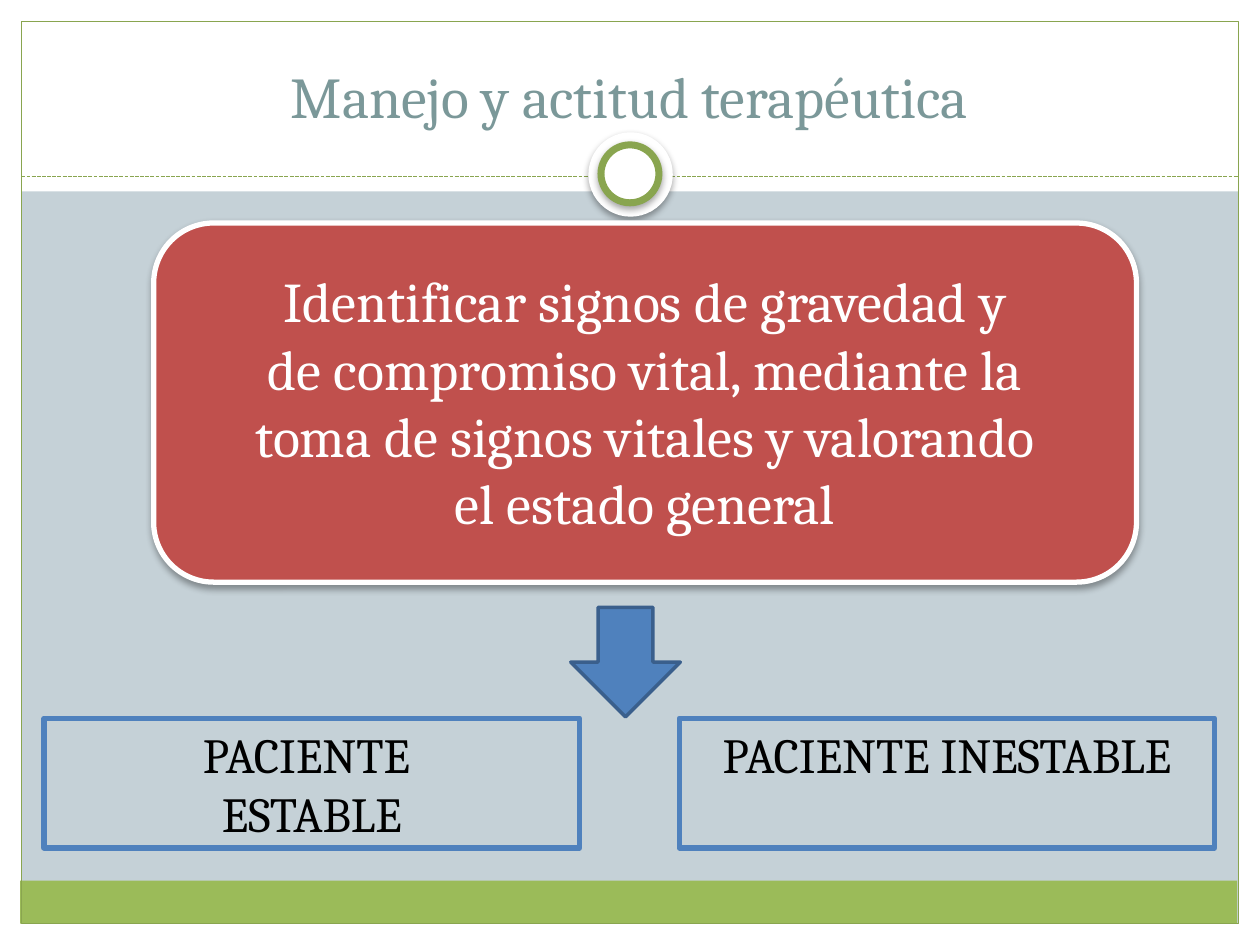
from dataclasses import dataclass
from typing import Optional

from lxml import etree
from pptx import Presentation
from pptx.dml.color import RGBColor
from pptx.enum import dml, shapes, text
from pptx.oxml import ns
from pptx.util import Inches, Pt

FONT = "Cambria"
COLORS = {
    "background": "C5D1D7", "white": "FFFFFF", "black": "000000",
    "green": "9BBB59", "dark_green": "89A54F", "title": "7B9899",
    "red": "C0504D", "blue": "4F81BD", "dark_blue": "3A5F8C",
}
KIND = shapes.MSO_SHAPE


@dataclass
class Block:
    left: float
    top: float
    width: float
    height: float
    kind: int = KIND.RECTANGLE
    fill: Optional[str] = None
    line: Optional[str] = None
    weight: float = 0.75
    shadow: bool = False


def rgb(name: str) -> RGBColor:
    return RGBColor.from_string(COLORS[name])


def add_shadow(shape) -> None:
    effects = shape._element.spPr.find(ns.qn("a:effectLst"))
    outer = etree.SubElement(effects, ns.qn("a:outerShdw"), blurRad=str(Pt(4)),
                             dist=str(Pt(2)), dir="5400000", rotWithShape="0")
    color = etree.SubElement(outer, ns.qn("a:srgbClr"), val=COLORS["black"])
    etree.SubElement(color, ns.qn("a:alpha"), val="35000")


def draw(slide, block: Block):
    shape = slide.shapes.add_shape(block.kind, Inches(block.left), Inches(block.top),
                                   Inches(block.width), Inches(block.height))
    shape.shadow.inherit = False
    if block.fill:
        shape.fill.solid()
        shape.fill.fore_color.rgb = rgb(block.fill)
    else:
        shape.fill.background()
    if block.line:
        shape.line.color.rgb = rgb(block.line)
        shape.line.width = Pt(block.weight)
    else:
        shape.line.fill.background()
    if block.shadow:
        add_shadow(shape)
    return shape


def write(shape, lines: list[str], size: float, color: str,
          anchor=text.MSO_ANCHOR.TOP) -> None:
    frame = shape.text_frame
    frame.word_wrap = True
    frame.auto_size = text.MSO_AUTO_SIZE.NONE
    frame.vertical_anchor = anchor
    for i, line in enumerate(lines):
        paragraph = frame.add_paragraph() if i else frame.paragraphs[0]
        paragraph.alignment = text.PP_ALIGN.CENTER
        run = paragraph.add_run()
        run.text = line
        run.font.name = FONT
        run.font.size = Pt(size)
        run.font.color.rgb = rgb(color)


def draw_frame(slide) -> None:
    margins = [
        Block(0, 7.33, 10, 0.17, fill="white"),
        Block(0, 0, 10, 1.52, fill="white"),
        Block(0, 0, 0.17, 7.5, fill="white"),
        Block(9.83, 0, 0.17, 7.5, fill="white"),
    ]
    footer = Block(0.16, 6.99, 9.66, 0.34, fill="green")
    border = Block(0.17, 0.17, 9.66, 7.16, line="dark_green")
    for block in [*margins, footer, border]:
        draw(slide, block)

    # Dashed divider below the title
    divider = slide.shapes.add_connector(shapes.MSO_CONNECTOR.STRAIGHT, Inches(0.17),
                                         Inches(1.4), Inches(9.83), Inches(1.4))
    divider.line.color.rgb = rgb("dark_green")
    divider.line.width = Pt(0.75)
    divider.line.dash_style = dml.MSO_LINE.SQUARE_DOT
    etree.SubElement(divider._element.spPr, ns.qn("a:effectLst"))

    # Ring on the divider
    draw(slide, Block(4.67, 1.05, 0.67, 0.67, KIND.OVAL, "white", shadow=True))
    draw(slide, Block(4.77, 1.15, 0.46, 0.46, KIND.OVAL, "white", "dark_green", 4, True))


def main() -> None:
    prs = Presentation()
    prs.slide_width, prs.slide_height = Inches(10), Inches(7.5)
    slide = prs.slides.add_slide(prs.slide_layouts[5])
    slide.background.fill.solid()
    slide.background.fill.fore_color.rgb = rgb("background")
    draw_frame(slide)

    # Title, brought in front of the white band
    title = slide.shapes.title
    title.left, title.top = Inches(0.33), Inches(0.25)
    title.width, title.height = Inches(9.33), Inches(0.83)
    write(title, ["Manejo y actitud terapéutica"], 33, "title", text.MSO_ANCHOR.BOTTOM)
    slide.shapes._spTree.append(title._element)

    # First step
    draw(slide, Block(1.22, 1.77, 7.8, 2.85, KIND.ROUNDED_RECTANGLE,
                      "red", "white", 3, True))
    first_step = slide.shapes.add_textbox(Inches(1.89), Inches(2.07),
                                          Inches(6.46), Inches(2.23))
    write(first_step, ["Identificar signos de gravedad y de compromiso vital, mediante la "
                       "toma de signos vitales y valorando el estado general"], 32, "white")
    draw(slide, Block(4.53, 4.82, 0.87, 0.87, KIND.DOWN_ARROW, "blue", "dark_blue", 2))

    # Two outcomes
    outcomes = [(0.35, ["PACIENTE ", "ESTABLE"]), (5.39, ["PACIENTE INESTABLE"])]
    for left, lines in outcomes:
        outcome = draw(slide, Block(left, 5.7, 4.25, 1.03, line="blue", weight=3))
        write(outcome, lines, 28, "black")

    prs.save("out.pptx")


if __name__ == "__main__":
    main()
